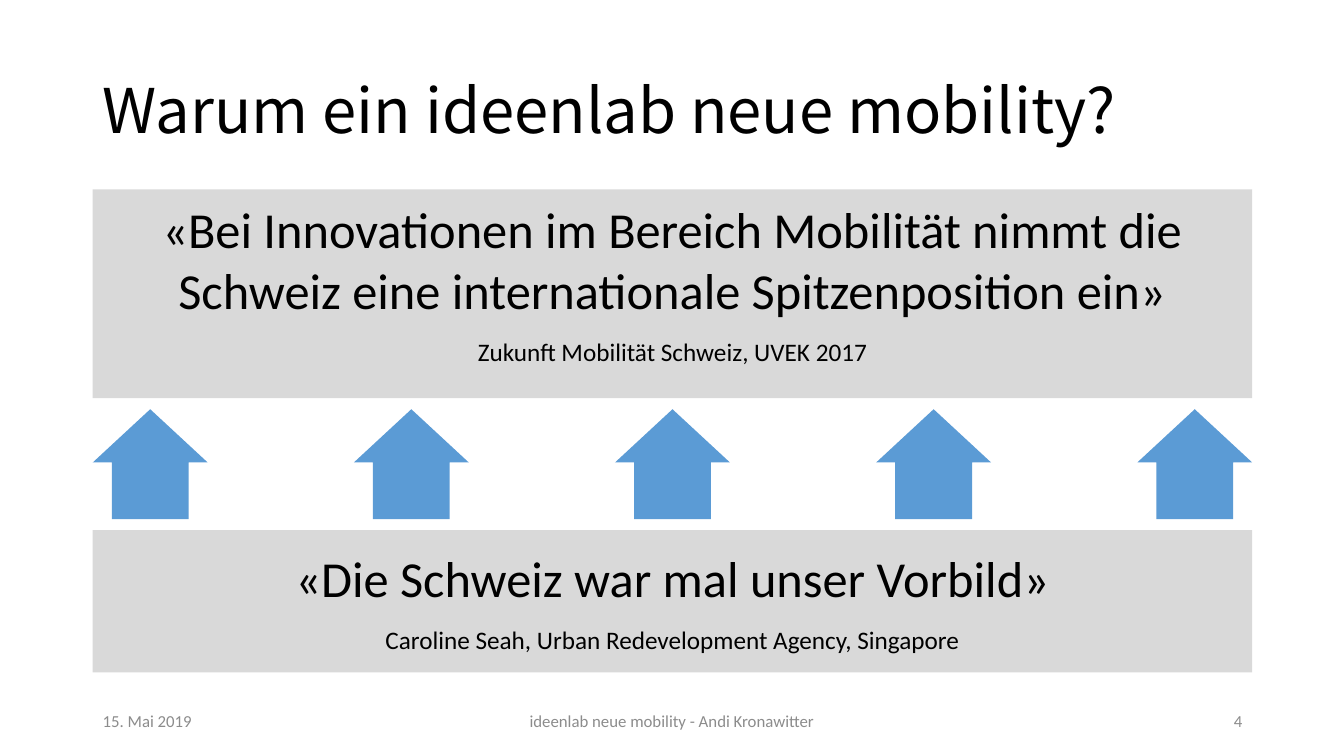
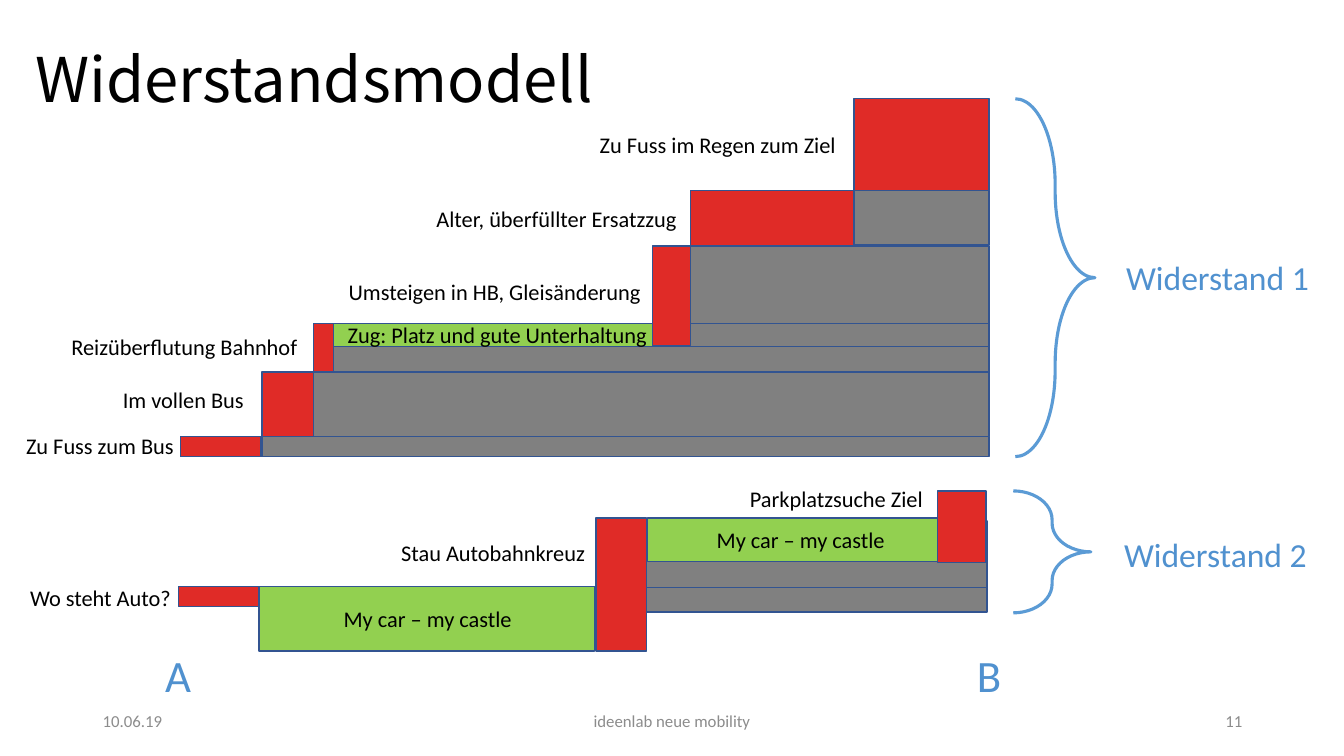
from collections import namedtuple

from lxml import etree
from pptx import Presentation
from pptx.dml.color import RGBColor
from pptx.enum.shapes import MSO_CONNECTOR, MSO_SHAPE as Preset
from pptx.enum.text import MSO_ANCHOR as Anchor, MSO_AUTO_SIZE, PP_ALIGN as Align
from pptx.oxml.ns import qn
from pptx.util import Inches, Pt

COLORS = {
    "text": "000000", "footer": "8C8C8C", "panel": "D9D9D9",
    "arrow": "5B9BD5", "accent": "5091CF", "base": "4472C4", "outline": "325491",
    "red": "E02B27", "gray": "808080", "green": "92D050",
}
TITLE_FONT, BODY_FONT = "Noto Sans CJK KR", "Calibri"
MARGIN, CONTENT_WIDTH = 0.92, 11.5
INITIATIVE = "ideenlab neue mobility"

Box = namedtuple("Box", "left top width height")
# Bars and labels are placed relative to their journey; a bar without
# width runs to the journey's right edge.
Bar = namedtuple("Bar", "color left top width height")
Label = namedtuple("Label", "text left top width")
Journey = namedtuple(
    "Journey", "box bars labels base brace_size brace_curve total total_top")

WITH_TRAIN = Journey(
    box=Box(1.79, 0.98, 8.02, 3.55),
    bars=[
        Bar("red", 0, 3.35, 0.8, 0.2),
        Bar("gray", 0.81, 3.35, None, 0.2),
        Bar("red", 0.81, 2.71, 0.52, 0.64),
        Bar("gray", 1.32, 2.71, None, 0.64),
        Bar("red", 1.32, 2.23, 0.21, 0.48),
        Bar("gray", 1.52, 2.23, None, 0.48),
        Bar("green", 1.52, 2.23, 3.16, 0.23),
        Bar("gray", 5.04, 1.46, None, 0.98),
        Bar("gray", 4.68, 2.23, None, 0.23),
        Bar("red", 5.06, 0.91, 1.62, 0.55),
        Bar("gray", 6.68, 0.91, None, 0.54),
        Bar("red", 6.68, 0, 1.34, 0.91),
        Bar("red", 4.68, 1.46, 0.38, 0.99),
    ],
    labels=[
        Label("Zu Fuss zum Bus", -1.63, 3.26, 1.69),
        Label("Im vollen Bus", -0.67, 2.8, 1.42),
        Label("Reizüberflutung Bahnhof", -1.18, 2.28, 2.47),
        Label("Zug: Platz und gute Unterhaltung", 1.56, 2.16, 3.2),
        Label("Umsteigen in HB, Gleisänderung", 1.57, 1.73, 3.13),
        Label("Alter, überfüllter Ersatzzug", 2.44, 1.01, 2.62),
        Label("Zu Fuss im Regen zum Ziel", 4.06, 0.27, 2.57),
    ],
    base=(3.55, 3.55), brace_size=(0.79, 3.55), brace_curve=1.078,
    total="Widerstand 1", total_top=1.52,
)
BY_CAR = Journey(
    box=Box(1.77, 4.87, 8.02, 1.59),
    bars=[
        Bar("red", 0, 0.95, 0.8, 0.2),
        Bar("gray", 0.8, 0.95, None, 0.25),
        Bar("green", 0.8, 0.95, 3.33, 0.64),
        Bar("red", 4.14, 0.27, 0.5, 1.32),
        Bar("gray", 4.64, 0.3, None, 0.66),
        Bar("green", 4.65, 0.27, 2.88, 0.43),
        Bar("red", 7.53, 0, 0.48, 0.71),
    ],
    labels=[
        Label("Wo steht Auto?", -1.57, 0.88, 1.62),
        Label("My car – my castle", 1.54, 1.08, 1.89),
        Label("My car – my castle", 5.24, 0.3, 1.89),
        Label("Stau Autobahnkreuz", 2.11, 0.43, 2.05),
        Label("Parkplatzsuche Ziel", 5.57, -0.11, 1.94),
    ],
    base=(1.05, 1.16), brace_size=(0.77, 1.21), brace_curve=0.371,
    total="Widerstand 2", total_top=0.38,
)


def rgb(color):
    return RGBColor.from_string(COLORS[color])


def inches(box):
    return [Inches(length) for length in box]


def style_paragraph(paragraph, size, color="text", align=Align.LEFT, font=BODY_FONT):
    paragraph.alignment = align
    paragraph.font.name = font
    paragraph.font.size = Pt(size)
    paragraph.font.color.rgb = rgb(color)


def add_text(slide, box, text, size, color="text", align=Align.LEFT,
             anchor=Anchor.TOP, wrap=False):
    frame = slide.shapes.add_textbox(*inches(box)).text_frame
    frame.word_wrap = wrap
    frame.vertical_anchor = anchor
    frame.text = text
    style_paragraph(frame.paragraphs[0], size, color, align)


def add_preset(slide, preset, box, fill=None, line=None, line_width=1):
    shape = slide.shapes.add_shape(preset, *inches(box))
    shape.shadow.inherit = False
    if fill:
        shape.fill.solid()
        shape.fill.fore_color.rgb = rgb(fill)
    else:
        shape.fill.background()
    if line:
        shape.line.color.rgb = rgb(line)
        shape.line.width = Pt(line_width)
    else:
        shape.line.fill.background()
    return shape


def add_base_line(slide, left, top, right, bottom):
    line = slide.shapes.add_connector(
        MSO_CONNECTOR.STRAIGHT, *inches((left, top, right, bottom)))
    line.line.color.rgb = rgb("base")
    line.line.width = Pt(0.5)
    etree.SubElement(line._element.spPr, qn("a:effectLst"))


def add_titled_slide(prs, title, left, top, footer):
    """Add a slide with its title and the date, name and number below."""
    slide = prs.slides.add_slide(prs.slide_layouts[5])
    heading = slide.shapes.title
    heading.left, heading.top, heading.width, heading.height = inches(
        (left, top, CONTENT_WIDTH, 1.45))
    frame = heading.text_frame
    frame.text = title
    frame.word_wrap = True
    frame.auto_size = MSO_AUTO_SIZE.NONE
    frame.vertical_anchor = Anchor.MIDDLE
    frame.paragraphs[0].line_spacing = 0.9
    style_paragraph(frame.paragraphs[0], 44, font=TITLE_FONT)

    columns = ((MARGIN, 2.25, Align.LEFT), (3.16, 7.01, Align.CENTER),
               (10.17, 2.25, Align.RIGHT))
    for text, (column, width, align) in zip(footer, columns):
        add_text(slide, Box(column, 6.95, width, 0.4), text, 12, "footer",
                 align, Anchor.MIDDLE, wrap=True)
    return slide


def add_quote(slide, box, quote, source, inset):
    frame = add_preset(slide, Preset.RECTANGLE, box, "panel").text_frame
    frame.word_wrap = True
    frame.vertical_anchor = Anchor.TOP
    frame.margin_top = Inches(inset)
    frame.text = quote
    style_paragraph(frame.paragraphs[0], 36, align=Align.CENTER)
    credit = frame.add_paragraph()
    credit.text = source
    credit.space_before = Pt(12)
    style_paragraph(credit, 18, align=Align.CENTER)


def add_arrow_row(slide, box, count=5, width=1.14):
    step = (box.width - width) / (count - 1)
    for index in range(count):
        arrow = add_preset(
            slide, Preset.UP_ARROW,
            Box(box.left + index * step, box.top, width, box.height), "arrow")
        arrow.adjustments[0] = 0.668
        arrow.adjustments[1] = 0.485


def add_journey(slide, journey):
    left, top, width, _ = journey.box
    start, end = journey.base
    add_base_line(slide, left, top + start, left + width, top + end)
    for bar in journey.bars:
        bar_width = width - bar.left if bar.width is None else bar.width
        add_preset(slide, Preset.RECTANGLE,
                   Box(left + bar.left, top + bar.top, bar_width, bar.height),
                   bar.color, "outline")
    for label in journey.labels:
        add_text(slide, Box(left + label.left, top + label.top, label.width, 0.37),
                 label.text, 16)
    brace = add_preset(slide, Preset.RIGHT_BRACE,
                       Box(left + width + 0.26, top, *journey.brace_size),
                       line="arrow", line_width=2.25)
    brace.adjustments[0] = journey.brace_curve
    add_text(slide, Box(left + width + 1.26, top + journey.total_top, 2.03, 0.5),
             journey.total, 24, "accent")


def build_reason_slide(prs):
    slide = add_titled_slide(
        prs, f"Warum ein {INITIATIVE}?", MARGIN, 0.4,
        ("15. Mai 2019", f"{INITIATIVE} - Andi Kronawitter", "4"))
    add_quote(slide, Box(MARGIN, 1.88, CONTENT_WIDTH, 2.07),
              "«Bei Innovationen im Bereich Mobilität nimmt die Schweiz "
              "eine internationale Spitzenposition ein»",
              "Zukunft Mobilität Schweiz, UVEK 2017", inset=0.09)
    add_arrow_row(slide, Box(MARGIN, 4.06, CONTENT_WIDTH, 1.09))
    add_quote(slide, Box(MARGIN, 5.26, CONTENT_WIDTH, 1.41),
              "«Die Schweiz war mal unser Vorbild»",
              "Caroline Seah, Urban Redevelopment Agency, Singapore", inset=0.17)


def build_resistance_slide(prs):
    slide = add_titled_slide(prs, "Widerstandsmodell", 0.25, 0.09,
                             ("10.06.19", INITIATIVE, "11"))
    for place, left in (("A", 1.54), ("B", 9.59)):
        add_text(slide, Box(left, 6.38, 0.46, 0.64), place, 32, "accent")
    for journey in (WITH_TRAIN, BY_CAR):
        add_journey(slide, journey)


def main():
    prs = Presentation()
    prs.slide_width, prs.slide_height = Inches(13.33), Inches(7.5)
    build_reason_slide(prs)
    build_resistance_slide(prs)
    prs.save("out.pptx")


if __name__ == "__main__":
    main()
